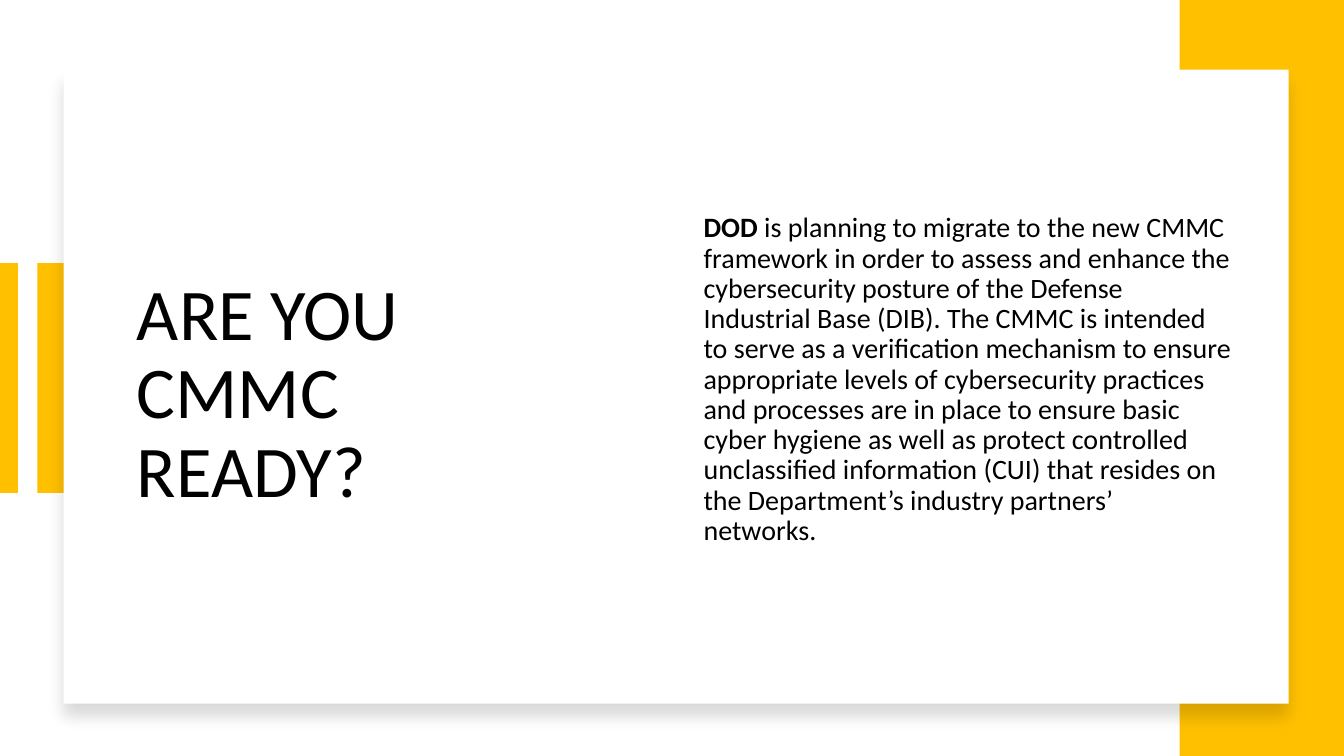
from pptx import Presentation
from pptx.dml.color import RGBColor
from pptx.enum.shapes import MSO_CONNECTOR, MSO_SHAPE
from pptx.enum.text import MSO_ANCHOR, PP_ALIGN
from pptx.oxml import parse_xml
from pptx.oxml.ns import nsdecls
from pptx.util import Inches, Pt

RECT = MSO_SHAPE.RECTANGLE
LINE = MSO_CONNECTOR.STRAIGHT
MIDDLE = MSO_ANCHOR.MIDDLE
LEFT = PP_ALIGN.LEFT

GOLD, WHITE, BLACK = "FFC000", "FFFFFF", "000000"
WIDTH, HEIGHT = 13.33, 7.5


def color(code):
    return RGBColor.from_string(code)


class Page:
    font = "Calibri"

    def __init__(self, slide):
        self.slide = slide

    def rect(self, left, top, width, height, fill):
        box = self.slide.shapes.add_shape(
            RECT, Inches(left), Inches(top), Inches(width), Inches(height))
        box.shadow.inherit = False
        box.fill.solid()
        box.fill.fore_color.rgb = color(fill)
        box.line.fill.background()
        return box

    def card(self, left, top, width, height, fill):
        box = self.rect(left, top, width, height, fill)
        effects = box.element.spPr.find(
            "{http://schemas.openxmlformats.org/drawingml/2006/main}effectLst")
        effects.append(parse_xml(
            f'<a:outerShdw {nsdecls("a")} blurRad="{Pt(11)}" dist="{Pt(10)}" '
            'dir="5400000" algn="t" rotWithShape="0">'
            f'<a:srgbClr val="{BLACK}"><a:alpha val="15000"/></a:srgbClr>'
            '</a:outerShdw>'))

    def line(self, x, top, bottom, tone, weight):
        rule = self.slide.shapes.add_connector(
            LINE, Inches(x), Inches(top), Inches(x), Inches(bottom))
        rule.line.color.rgb = color(tone)
        rule.line.width = Pt(weight)
        rule.element.spPr.append(parse_xml(f'<a:effectLst {nsdecls("a")}/>'))

    def text(self, left, top, width, height, runs, size, after=0, foot=0.05):
        box = self.slide.shapes.add_textbox(
            Inches(left), Inches(top), Inches(width), Inches(height))
        frame = box.text_frame
        frame.word_wrap = True
        frame.vertical_anchor = MIDDLE
        frame.margin_bottom = Inches(foot)
        para = frame.paragraphs[0]
        para.alignment = LEFT
        para.line_spacing = 0.9
        para.space_after = Pt(after)
        for words, bold in runs:
            run = para.add_run()
            run.text = words
            run.font.name = self.font
            run.font.size = Pt(size)
            run.font.bold = bold
            run.font.color.rgb = color(BLACK)


def main():
    deck = Presentation()
    deck.slide_width, deck.slide_height = Inches(WIDTH), Inches(HEIGHT)
    page = Page(deck.slides.add_slide(deck.slide_layouts[6]))

    # Gold accents on both sides
    page.rect(0.37, 2.61, 0.34, 2.28, GOLD)
    page.line(0.08, 2.61, 4.89, GOLD, 14)
    page.rect(11.7, 0, WIDTH - 11.7, HEIGHT, GOLD)

    # White card
    page.card(0.63, 0.69, 12.15, 6.29, WHITE)

    # Title and body
    page.text(1.26, 1.36, 4.38, 5.12, [("ARE YOU CMMC READY?", False)], 52, 6)
    body = (
        " is planning to migrate to the new CMMC framework in order to assess "
        "and enhance the cybersecurity posture of the Defense Industrial Base "
        "(DIB). The CMMC is intended to serve as a verification mechanism to "
        "ensure appropriate levels of cybersecurity practices and processes "
        "are in place to ensure basic cyber hygiene as well as protect "
        "controlled unclassified information (CUI) that resides on the "
        "Department’s industry partners’ networks.")
    page.text(6.88, 1.36, 5.44, 5.12, [("DOD", True), (body, False)], 20,
              foot=0.35)

    deck.save("out.pptx")


if __name__ == "__main__":
    main()
